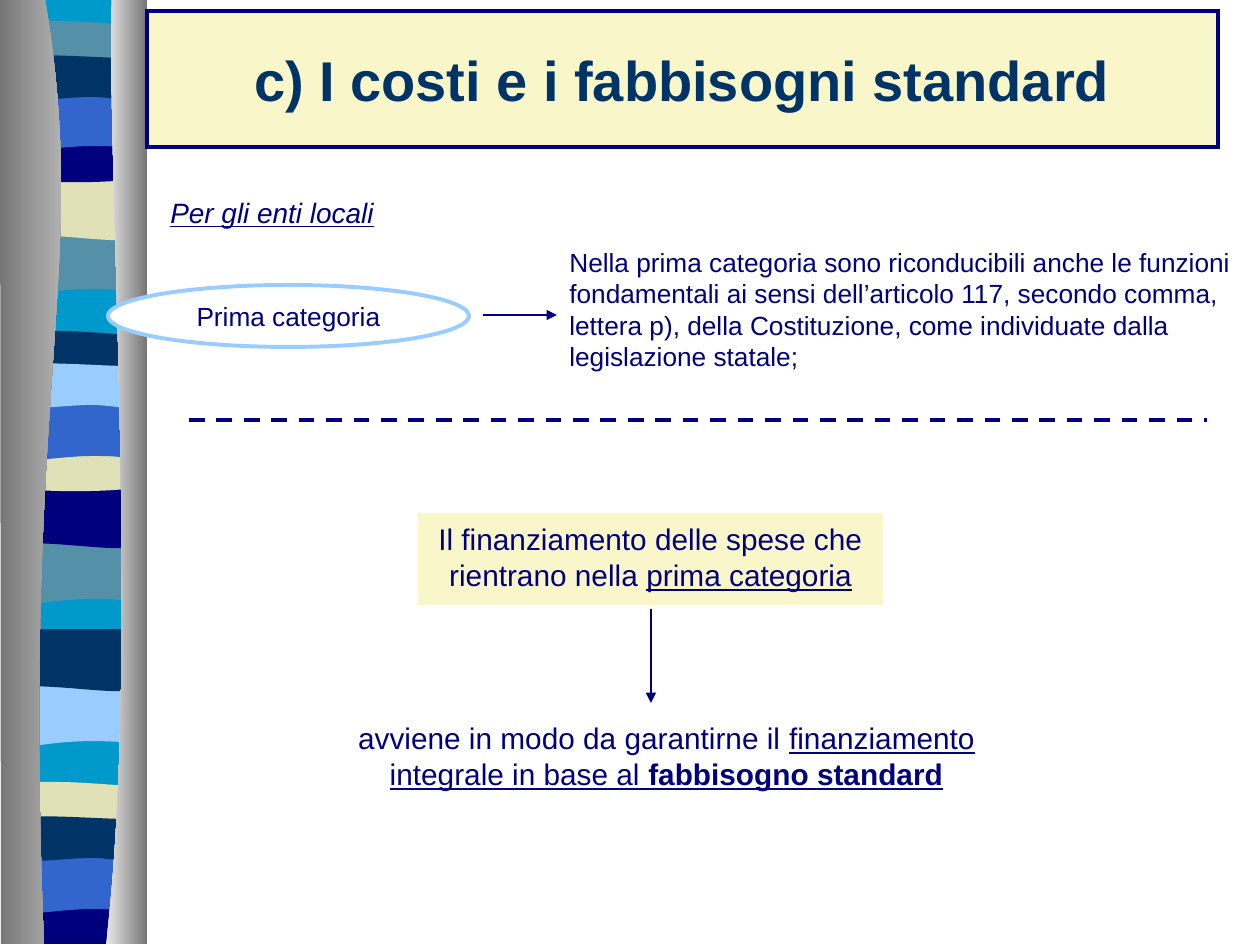
from lxml import etree
from pptx import Presentation
from pptx.dml.color import RGBColor
from pptx.enum.dml import MSO_LINE
from pptx.enum.shapes import MSO_CONNECTOR, MSO_SHAPE
from pptx.enum.text import MSO_ANCHOR, MSO_AUTO_SIZE, PP_ALIGN
from pptx.oxml.ns import qn
from pptx.util import Pt

STRAIGHT = MSO_CONNECTOR.STRAIGHT
RECTANGLE, OVAL = MSO_SHAPE.RECTANGLE, MSO_SHAPE.OVAL
LEFT, CENTER = PP_ALIGN.LEFT, PP_ALIGN.CENTER
TOP, MIDDLE = MSO_ANCHOR.TOP, MSO_ANCHOR.MIDDLE
FIT_NONE, FIT_SHAPE = MSO_AUTO_SIZE.NONE, MSO_AUTO_SIZE.SHAPE_TO_FIT_TEXT
DASH = MSO_LINE.DASH

PX = 914400 / 126

NAVY, INK, CREAM, WHITE = "00007E", "003366", "F9F7CA", "FFFFFF"
TEAL, SAND, BLUE, SKY, CYAN = "5490A8", "E1E1B7", "3366CC", "99CCFF", "0099CC"

# A two-number step is a straight edge; a six-number step is a Bezier curve.
OUTLINES = {
    "base": [(144, 0), (144, 942), (6, 942), (6, 0)],
    "wave": [(144, 0), (144, 59), (49, 49, 30, 69, 6, 59), (6, 0)],
    "cup": [(144, 0), (144, 59), (121, 69, 49, 52, 7, 59), (7, 0)],
    "sag": [(144, 6), (144, 37), (121, 43, 30, 43, 6, 37), (6, 6),
            (15, 0, 37, 1, 59, 1), (82, 1, 126, 5, 144, 6)],
    "bowl": [(144, 0), (144, 41), (121, 48, 30, 48, 6, 41), (6, 0),
             (90, 6, 115, 0, 144, 0)],
    "arch": [(144, 0), (144, 59), (122, 53, 113, 53, 91, 53),
             (68, 53, 28, 59, 6, 59), (6, 0)],
    "swell": [(144, 6), (144, 45), (135, 52, 113, 45, 91, 45),
              (68, 45, 21, 52, 6, 45), (6, 6), (26, 0, 100, 6, 123, 6),
              (145, 6, 139, 6, 144, 6)],
    "floor": [(144, 0), (144, 47), (7, 47), (6, 0), (90, 6, 115, 0, 144, 0)],
    "left drape": [(45, -1), (91, 272, 21, 373, 44, 944), (1, 944), (0, -1)],
    "right drape": [(112, -1), (106, 158, 141, 657, 106, 944), (147, 944), (147, 0)],
}
RIBBON = [
    ("base", 0, CYAN),
    ("wave", 233, TEAL), ("cup", 178, SAND), ("sag", 20, TEAL),
    ("bowl", 136, NAVY), ("arch", 93, BLUE), ("swell", 52, INK),
    ("wave", 543, TEAL), ("cup", 486, NAVY), ("sag", 330, INK),
    ("bowl", 445, SAND), ("arch", 403, BLUE), ("swell", 360, SKY),
    ("wave", 685, SKY), ("cup", 629, INK), ("sag", 781, SAND),
    ("floor", 897, NAVY), ("arch", 856, BLUE), ("swell", 813, INK),
    ("left drape", 0, ("767676", "D0D0D0")),
    ("right drape", 0, ("E8E8E8", "767676")),
]

TITLE = ("c) I costi e i fabbisogni standard", {"bold": True})
BOXES = [
    (RECTANGLE, (557, 240, 703, 139), WHITE, None, LEFT, 15, [
        ("Nella prima categoria sono riconducibili anche le funzioni fondamentali "
         "ai sensi dell’articolo 117, secondo comma, lettera p), della Costituzione, "
         "come individuate dalla legislazione statale;", {})]),
    (RECTANGLE, (420, 515, 461, 88), CREAM, CREAM, CENTER, 17, [
        ("Il finanziamento delle spese che rientrano nella ", {}),
        ("prima categoria", {"underline": True})]),
    (OVAL, (108, 285, 361, 62), WHITE, SKY, CENTER, 15, [("Prima categoria", {})]),
    (RECTANGLE, (315, 714, 703, 85), WHITE, None, CENTER, 17, [
        ("avviene in modo da garantirne il ", {}),
        ("finanziamento integrale in base al ", {"underline": True}),
        ("fabbisogno standard", {"underline": True, "bold": True})]),
]
HEADING_BOX = (158, 189, 229, 47)
HEADING = ("Per gli enti locali", {"italic": True, "underline": True})
ARROWS = [(483, 315, 557, 315), (651, 609, 651, 703)]
DIVIDER = (189, 420, 1207, 420)


def emu(*lengths):
    return [round(length * PX) for length in lengths]


def color(value):
    return RGBColor.from_string(value)


def assign(target, values):
    for name, value in values.items():
        setattr(target, name, value)


def place(shape, box):
    assign(shape, dict(zip(("left", "top", "width", "height"), emu(*box))))


def paint(shape, fill, line=None):
    shape.fill.solid()
    shape.fill.fore_color.rgb = color(fill)
    if line:
        shape.line.color.rgb = color(line)
        shape.line.width = Pt(2.25)
        etree.SubElement(shape.line._get_or_add_ln(), qn("a:miter"), lim="800000")
    else:
        shape.line.fill.background()


def write(shape, runs, size, align=LEFT, ink=NAVY, **frame_format):
    frame = shape.text_frame
    assign(frame, {"word_wrap": True, "auto_size": FIT_SHAPE,
                   "vertical_anchor": TOP, **frame_format})
    paragraph = frame.paragraphs[0]
    paragraph.alignment = align
    for text, font_format in runs:
        run = paragraph.add_run()
        run.text = text
        assign(run.font, {"name": "Arial", "size": Pt(size), **font_format})
        run.font.color.rgb = color(ink)


def bend(shape, steps):
    edges = iter(list(shape._element.iter(qn("a:lnTo"))))
    for step in steps:
        group = [next(edges) for _ in range(len(step) // 2)]
        if len(group) == 3:
            curve = etree.Element(qn("a:cubicBezTo"))
            group[0].addprevious(curve)
            for edge in group:
                curve.append(edge[0])
                edge.getparent().remove(edge)


def add_band(slide, outline, top, fill):
    steps = OUTLINES[outline]
    points = [emu(step[index], step[index + 1] + top)
              for step in steps for index in range(0, len(step), 2)]
    builder = slide.shapes.build_freeform(*points[0], scale=1.0)
    builder.add_line_segments(points[1:], close=True)
    shape = builder.convert_to_shape()
    bend(shape, steps[1:])
    shape.shadow.inherit = False
    if isinstance(fill, str):
        paint(shape, fill)
        return
    shape.line.fill.background()
    shape.fill.gradient()
    shape.fill.gradient_angle = 0
    for stop, value in zip(shape.fill.gradient_stops, fill):
        stop.color.rgb = color(value)


def add_line(slide, ends, width):
    connector = slide.shapes.add_connector(STRAIGHT, *emu(*ends))
    connector.line.color.rgb = color(NAVY)
    connector.line.width = Pt(width)
    etree.SubElement(connector._element.spPr, qn("a:effectLst"))
    return connector


def main():
    presentation = Presentation()
    presentation.slide_width, presentation.slide_height = emu(1260, 945)
    slide = presentation.slides.add_slide(presentation.slide_layouts[5])

    for outline, top, fill in RIBBON:
        add_band(slide, outline, top, fill)

    title = slide.shapes.title
    title._element.getparent().append(title._element)
    place(title, (147, 11, 1071, 136))
    paint(title, CREAM, NAVY)
    write(title, [TITLE], 32, CENTER, INK, auto_size=FIT_NONE, vertical_anchor=MIDDLE)

    for kind, box, fill, line, align, size, runs in BOXES:
        shape = slide.shapes.add_shape(kind, *emu(*box))
        shape.shadow.inherit = False
        paint(shape, fill, line)
        write(shape, runs, size, align)

    for ends in ARROWS:
        line = add_line(slide, ends, 0.75).line
        etree.SubElement(line._get_or_add_ln(), qn("a:tailEnd"), type="triangle")
    add_line(slide, DIVIDER, 2.25).line.dash_style = DASH

    heading = slide.shapes.add_textbox(*emu(*HEADING_BOX))
    write(heading, [HEADING], 16, word_wrap=False)

    presentation.save("out.pptx")


if __name__ == "__main__":
    main()
